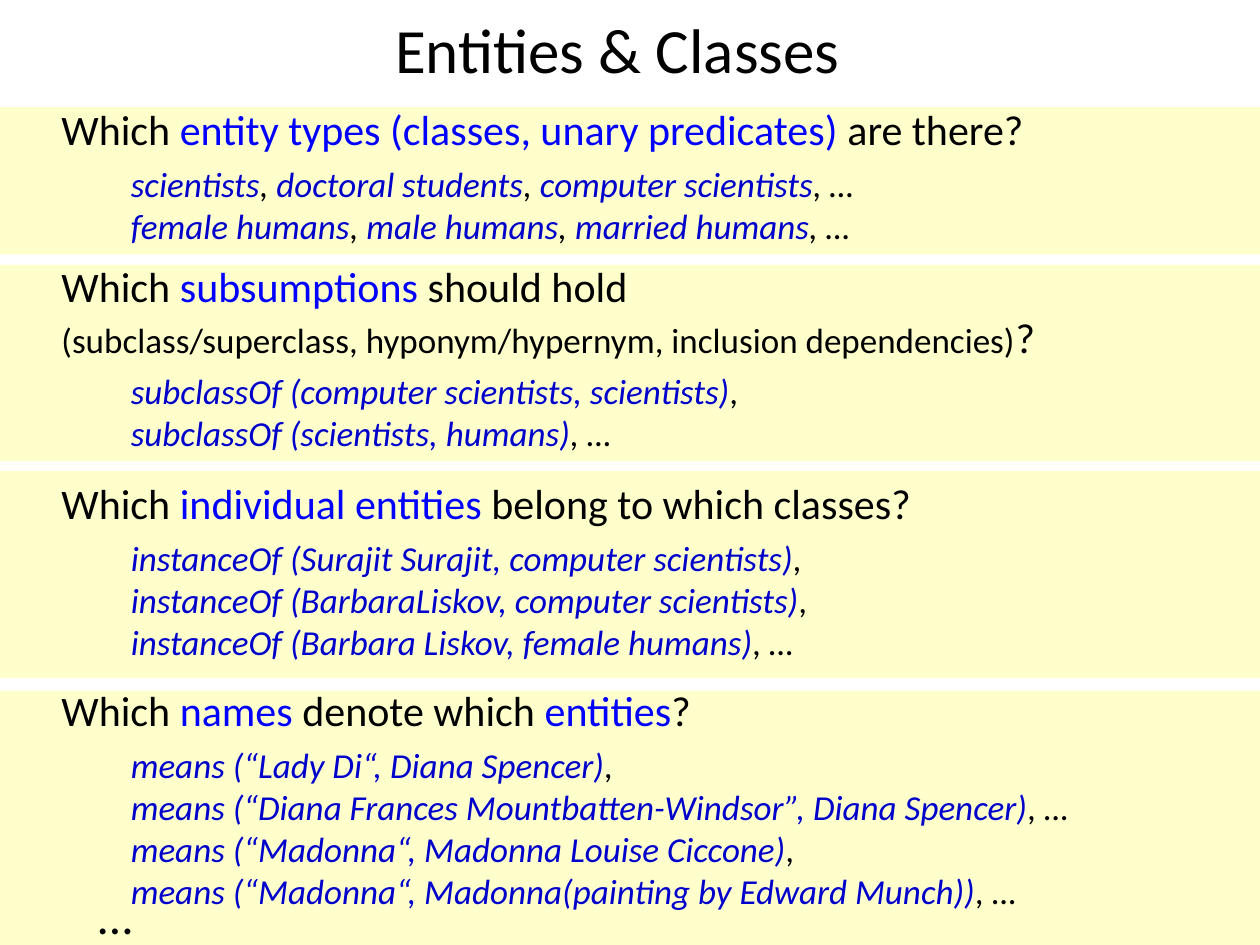
import itertools

import pptx
import pptx.dml.color
import pptx.enum.shapes
import pptx.enum.text
import pptx.util

Pt = pptx.util.Pt
RGBColor = pptx.dml.color.RGBColor

BLACK = RGBColor(0x00, 0x00, 0x00)
TERM_BLUE = RGBColor(0x00, 0x00, 0xFF)
EXAMPLE_BLUE = RGBColor(0x00, 0x00, 0xCC)
BAND_YELLOW = RGBColor(0xFF, 0xFF, 0xCC)

FONT = "Calibri"
SLIDE_WIDTH, SLIDE_HEIGHT = 720, 540
QUESTION_LEFT, EXAMPLE_LEFT = 28, 67.7
QUESTION_SIZE, EXAMPLE_SIZE = 24, 20

# Each section: band, question and examples as (top, width or None, height).
# Question texts alternate black and blue; example texts alternate blue and black.
SECTIONS = [
    {
        "band": (61.2, 84.2),
        "question_box": (55.4, 670.3, 36),
        "question": ["Which ", "entity types (classes, unary predicates) ", "are there?"],
        "example_box": (89.3, 432.7, 55.4),
        "examples": [
            ["scientists", ", ", "doctoral students", ", ", "computer scientists", ", …"],
            ["female humans", ",", " male humans", ", ", "married humans", ", …"],
        ],
    },
    {
        "band": (151.2, 112.3),
        "question_box": (145.4, 683.3, 65.5),
        "question": ["Which ", "subsumptions ", "should hold"],
        "remark": "(subclass/superclass, hyponym/hypernym, inclusion dependencies)",
        "example_box": (207.4, 365, 55.4),
        "examples": [
            ["subclassOf (computer scientists, scientists)", ","],
            ["subclassOf (scientists, humans)", ", …"],
        ],
    },
    {
        "band": (269.3, 118.1),
        "question_box": (269.3, 598.3, 36),
        "question": ["Which ", "individual entities ", "belong to which classes?"],
        "example_box": (303.1, 404.6, 79.9),
        "examples": [
            ["instanceOf (Surajit Surajit, computer scientists)", ","],
            ["instanceOf (BarbaraLiskov, computer scientists)", ","],
            ["instanceOf (Barbara Liskov, female humans)", ", …"],
        ],
    },
    {
        "band": (394.6, 145.4),
        "question_box": (387.4, 438.5, 36),
        "question": ["Which ", "names ", "denote which ", "entities", "?"],
        "example_box": (421.2, 554.4, 104.4),
        "examples": [
            ["means (“Lady Di“, Diana Spencer)", ","],
            ["means (“Diana Frances Mountbatten-Windsor”, Diana Spencer)", ", …"],
            ["means (“Madonna“, Madonna Louise Ciccone)", ","],
            ["means (“Madonna“, Madonna(painting by Edward Munch))", ", …"],
        ],
    },
]


def add_run(paragraph, text, size, color=BLACK, italic=False):
    run = paragraph.add_run()
    run.text = text
    run.font.name = FONT
    run.font.size = Pt(size)
    run.font.color.rgb = color
    run.font.italic = italic


def add_alternating_runs(paragraph, texts, size, colors, italic=False):
    for text, color in zip(texts, itertools.cycle(colors)):
        add_run(paragraph, text, size, color, italic)


def add_text_frame(slide, left, top, width, height):
    box = slide.shapes.add_textbox(Pt(left), Pt(top), Pt(width), Pt(height))
    box.text_frame.word_wrap = True
    return box.text_frame


def add_band(slide, top, height):
    band = slide.shapes.add_shape(
        pptx.enum.shapes.MSO_SHAPE.RECTANGLE, 0, Pt(top), Pt(SLIDE_WIDTH), Pt(height))
    band.shadow.inherit = False
    band.fill.solid()
    band.fill.fore_color.rgb = BAND_YELLOW
    band.line.fill.background()


def add_question(slide, section):
    frame = add_text_frame(slide, QUESTION_LEFT, *section["question_box"])
    add_alternating_runs(frame.paragraphs[0], section["question"],
                         QUESTION_SIZE, (BLACK, TERM_BLUE))
    if "remark" in section:
        paragraph = frame.add_paragraph()
        add_run(paragraph, section["remark"], EXAMPLE_SIZE)
        add_run(paragraph, "?", QUESTION_SIZE)


def add_examples(slide, section):
    frame = add_text_frame(slide, EXAMPLE_LEFT, *section["example_box"])
    for index, texts in enumerate(section["examples"]):
        paragraph = frame.add_paragraph() if index else frame.paragraphs[0]
        add_alternating_runs(paragraph, texts, EXAMPLE_SIZE,
                             (EXAMPLE_BLUE, BLACK), italic=True)


def format_title(slide, text):
    title = slide.shapes.title
    title.left, title.top, title.width, title.height = 0, 0, Pt(705.6), Pt(54.7)
    title.text_frame.vertical_anchor = pptx.enum.text.MSO_ANCHOR.MIDDLE
    paragraph = title.text_frame.paragraphs[0]
    paragraph.alignment = pptx.enum.text.PP_ALIGN.CENTER
    add_run(paragraph, text, 36)


def main():
    presentation = pptx.Presentation()
    presentation.slide_width = Pt(SLIDE_WIDTH)
    presentation.slide_height = Pt(SLIDE_HEIGHT)
    slide = presentation.slides.add_slide(presentation.slide_layouts.get_by_name("Title Only"))
    format_title(slide, "Entities & Classes")

    # Bands lie behind all text
    for section in SECTIONS:
        add_band(slide, *section["band"])

    # Closing ellipsis
    frame = add_text_frame(slide, 48.2, 502.6, 45.4, 41)
    add_run(frame.paragraphs[0], "...", 28)

    # Questions with their examples
    for section in SECTIONS:
        add_question(slide, section)
        add_examples(slide, section)

    presentation.save("out.pptx")


if __name__ == "__main__":
    main()
